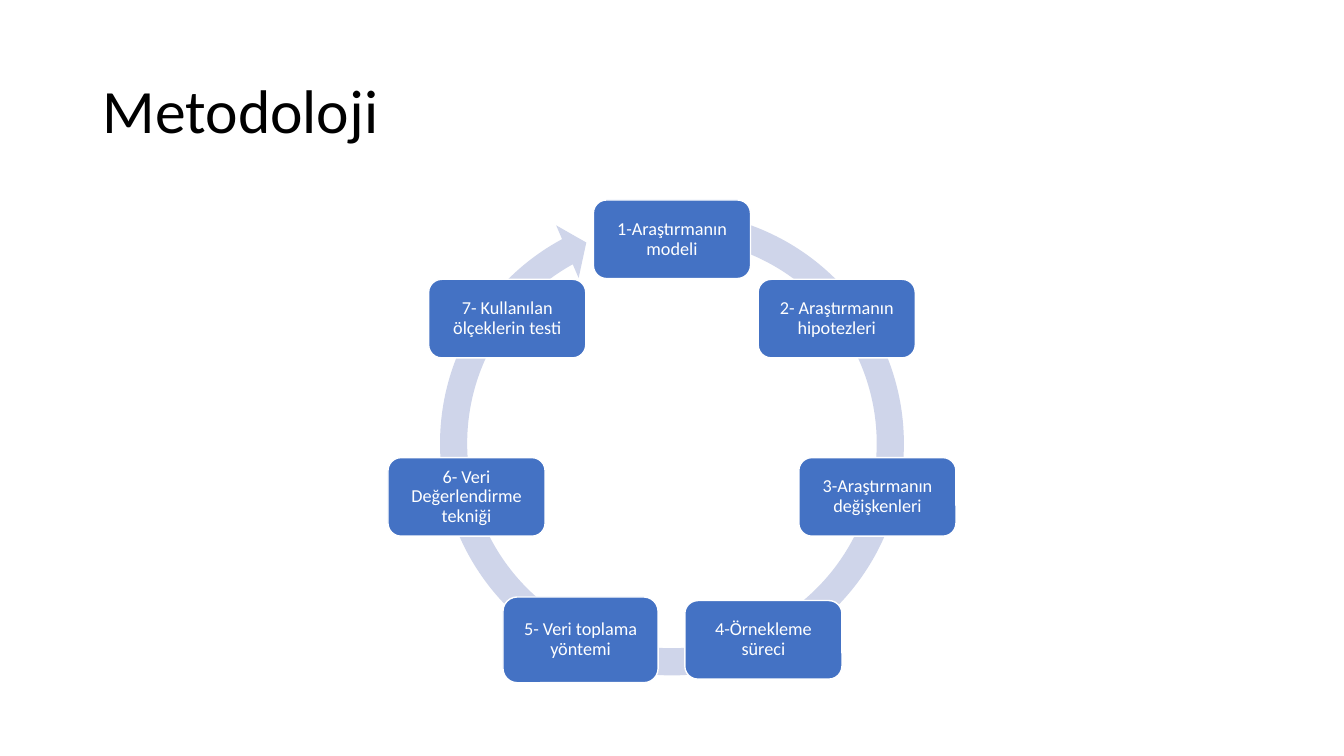
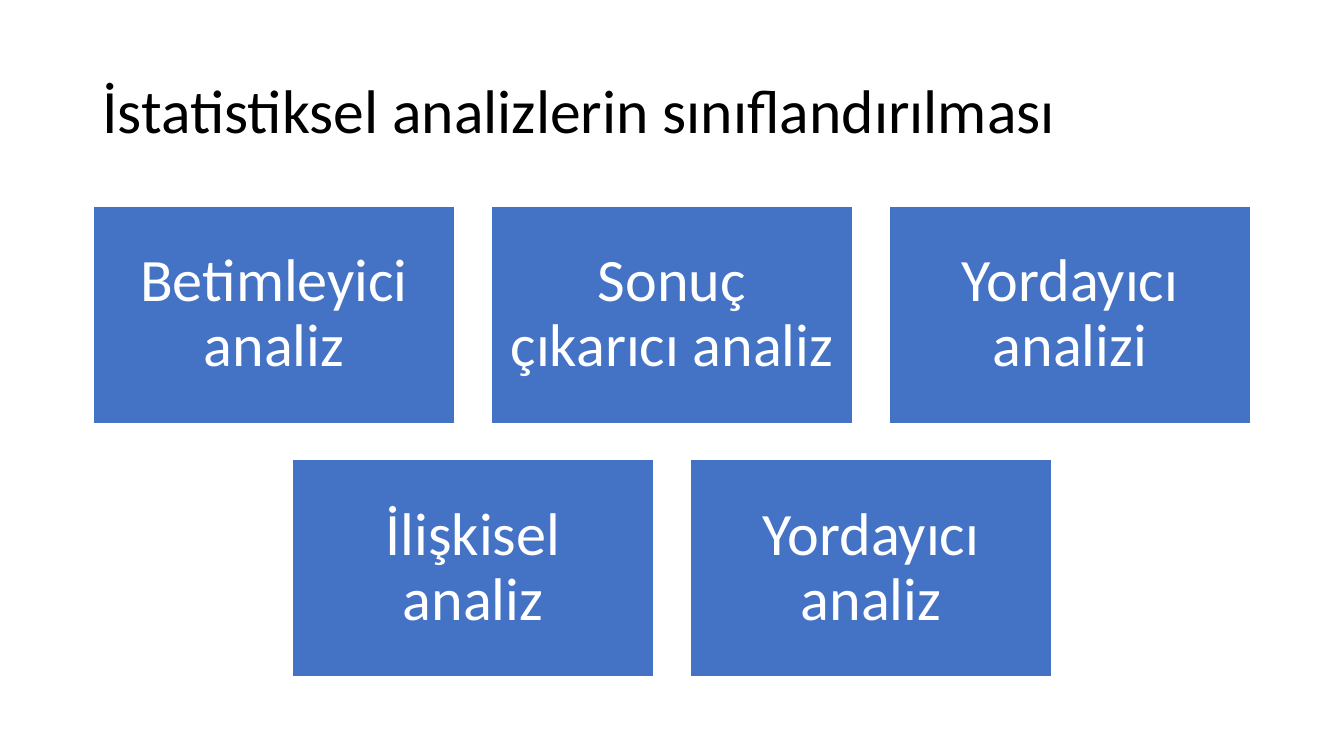
import dataclasses
import math

import pptx
import pptx.dml.color
import pptx.enum.shapes
import pptx.enum.text
import pptx.util

Cm = pptx.util.Cm
Shape = pptx.enum.shapes.MSO_SHAPE
Align = pptx.enum.text.PP_ALIGN

COLORS = {"title": "000000", "box": "4472C4", "ring": "CFD5EA", "white": "FFFFFF"}
FONT = "Calibri"
PAGE_WIDTH, PAGE_HEIGHT = 33.87, 19.05
CENTER_X = PAGE_WIDTH / 2


@dataclasses.dataclass
class Step:
    text: str
    width: float = 3.96
    height: float = 1.98


STEPS = [
    Step("1-Araştırmanın modeli"),
    Step("2- Araştırmanın hipotezleri"),
    Step("3-Araştırmanın değişkenleri"),
    Step("4-Örnekleme süreci"),
    Step("5- Veri toplama yöntemi", width=3.91, height=2.16),
    Step("6- Veri Değerlendirme tekniği"),
    Step("7- Kullanılan ölçeklerin testi"),
]
ANALYSIS_ROWS = [
    ["Betimleyici analiz", "Sonuç çıkarıcı analiz", "Yordayıcı analizi"],
    ["İlişkisel analiz", "Yordayıcı analiz"],
]


def rgb(name: str) -> pptx.dml.color.RGBColor:
    return pptx.dml.color.RGBColor.from_string(COLORS[name])


def write_text(shape, text: str, *, size: float, color: str, align) -> None:
    """Put one formatted paragraph, centred vertically, into a shape."""
    frame = shape.text_frame
    frame.word_wrap = True
    frame.auto_size = pptx.enum.text.MSO_AUTO_SIZE.NONE
    frame.vertical_anchor = pptx.enum.text.MSO_ANCHOR.MIDDLE
    para = frame.paragraphs[0]
    para.alignment = align
    para.line_spacing = 0.9
    span = para.add_run()
    span.text = text
    span.font.name = FONT
    span.font.size = pptx.util.Pt(size)
    span.font.color.rgb = rgb(color)


def add_page(deck, title: str):
    """Add a title-only page with the shared title style."""
    page = deck.slides.add_slide(deck.slide_layouts[5])
    box = page.shapes.title
    box.left, box.top, box.width, box.height = Cm(2.33), Cm(1.01), Cm(29.21), Cm(3.68)
    write_text(box, title, size=44, color="title", align=Align.LEFT)
    return page


def add_box(page, kind, text: str, *, left: float, top: float, width: float,
            height: float, size: float, inset: float) -> None:
    """Add a blue box with a white outline and centred text."""
    box = page.shapes.add_shape(kind, Cm(left), Cm(top), Cm(width), Cm(height))
    box.shadow.inherit = False
    box.fill.solid()
    box.fill.fore_color.rgb = rgb("box")
    box.line.color.rgb = rgb("white")
    box.line.width = pptx.util.Pt(1)
    frame = box.text_frame
    frame.margin_left = frame.margin_right = Cm(inset)
    frame.margin_top = frame.margin_bottom = Cm(inset)
    write_text(box, text, size=size, color="white", align=Align.CENTER)


def add_ring(page, *, top: float, diameter: float) -> None:
    """Add the circular arrow that runs behind the steps."""
    ring = page.shapes.add_shape(Shape.CIRCULAR_ARROW, Cm(CENTER_X - diameter / 2),
                                 Cm(top), Cm(diameter), Cm(diameter))
    ring.shadow.inherit = False
    ring.fill.solid()
    ring.fill.fore_color.rgb = rgb("ring")
    ring.line.fill.background()
    # Band thickness and head width are shares of the size, the rest are degrees
    unit = 0.6
    values = [5.5 / 100, 5.51 * unit, 241.4 * unit, 282.81 * unit, 5.8 / 100]
    for index, value in enumerate(values):
        ring.adjustments[index] = value


def build_methodology(deck) -> None:
    page = add_page(deck, "Metodoloji")
    add_ring(page, top=4.95, diameter=12.45)
    # Steps sit clockwise at equal angles, starting at the top
    center_y, radius = 11.34, 5.31
    for index, step in enumerate(STEPS):
        angle = 2 * math.pi * index / len(STEPS)
        add_box(page, Shape.ROUNDED_RECTANGLE, step.text,
                left=CENTER_X + radius * math.sin(angle) - step.width / 2,
                top=center_y - radius * math.cos(angle) - step.height / 2,
                width=step.width, height=step.height, size=13, inset=0.13)


def build_analyses(deck) -> None:
    page = add_page(deck, "İstatistiksel analizlerin sınıflandırılması")
    # Each row is centred on the page
    width, height, gap, top = 9.12, 5.48, 0.91, 5.19
    for row, texts in enumerate(ANALYSIS_ROWS):
        row_width = len(texts) * (width + gap) - gap
        for column, text in enumerate(texts):
            add_box(page, Shape.RECTANGLE, text,
                    left=CENTER_X - row_width / 2 + column * (width + gap),
                    top=top + row * (height + gap),
                    width=width, height=height, size=43, inset=0.46)


def main() -> None:
    deck = pptx.Presentation()
    deck.slide_width, deck.slide_height = Cm(PAGE_WIDTH), Cm(PAGE_HEIGHT)
    build_methodology(deck)
    build_analyses(deck)
    deck.save("out.pptx")


if __name__ == "__main__":
    main()
